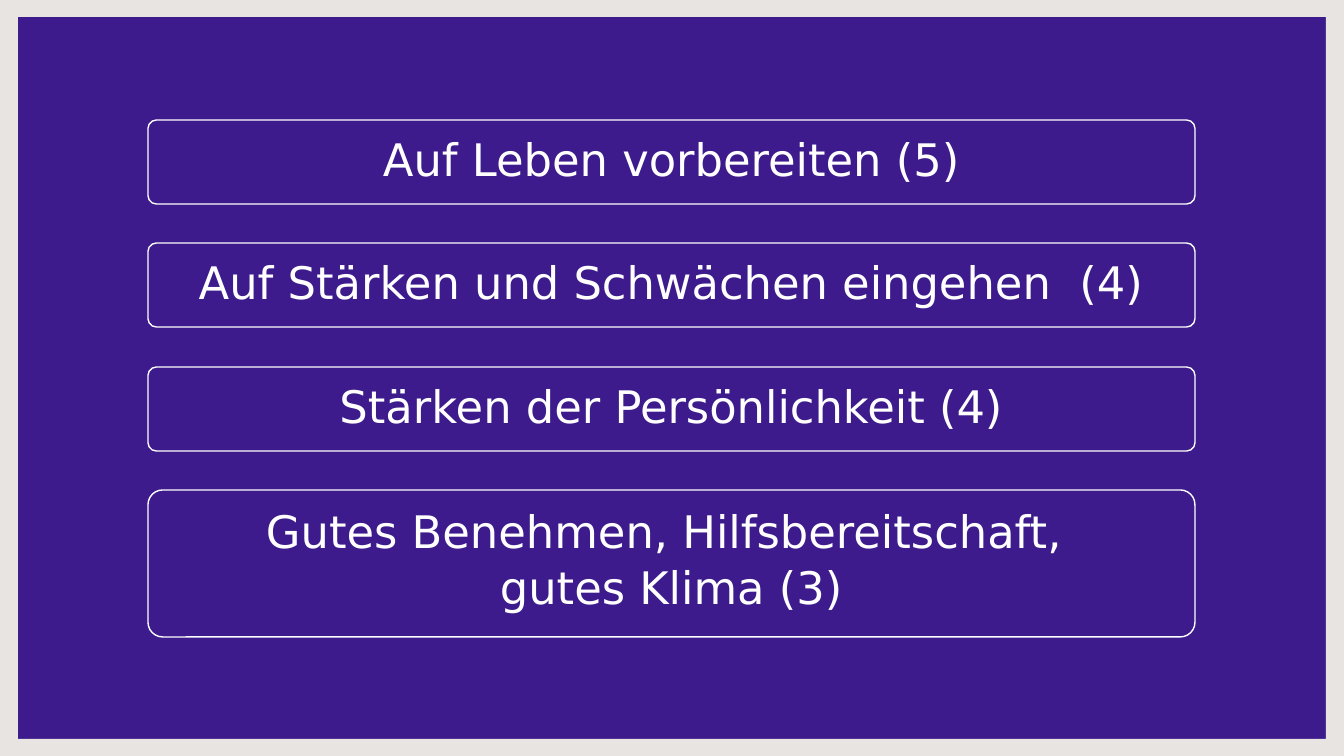
import dataclasses

import pptx
import pptx.dml.color
import pptx.enum.shapes
import pptx.enum.text
import pptx.util


@dataclasses.dataclass(frozen=True)
class Theme:
    """Colours and type of the deck."""
    background: str = "3D1B8C"
    border: str = "E8E4E2"
    text: str = "FFFFFF"
    font: str = "DejaVu Sans"
    size: int = 32
    line_spacing: float = 1.04
    outline: int = 1


class SlideBuilder:
    """Adds styled elements to the current slide, in pixels."""
    SCALE = 914400 / 100.8

    def __init__(self, page, theme):
        self.page = page
        self.theme = theme

    @classmethod
    def px(cls, length):
        """Turn pixels into EMU."""
        return pptx.util.Emu(round(length * cls.SCALE))

    @staticmethod
    def paint(fill, colour):
        """Give a fill one solid colour."""
        fill.solid()
        fill.fore_color.rgb = pptx.dml.color.RGBColor.from_string(colour)

    def background(self):
        """Colour the slide background."""
        self.paint(self.page.background.fill, self.theme.background)

    def border(self, width, height, margin_x, margin_y):
        """Draw a border around the slide with an open centre."""
        right, bottom = width - margin_x, height - margin_y
        outline = self.page.shapes.build_freeform(0, 0, scale=self.SCALE)
        outline.add_line_segments([(width, 0), (width, height), (0, height)])
        outline.move_to(margin_x, margin_y)
        outline.add_line_segments(
            [(margin_x, bottom), (right, bottom), (right, margin_y)])
        border = outline.convert_to_shape()
        border.shadow.inherit = False
        self.paint(border.fill, self.theme.border)
        border.line.fill.background()

    def answer(self, left, top, width, height, lines):
        """Draw an outlined rounded box with one paragraph per line."""
        box = self.page.shapes.add_shape(
            pptx.enum.shapes.MSO_SHAPE.ROUNDED_RECTANGLE,
            *map(self.px, (left, top, width, height)))
        box.adjustments[0] = 0.1
        box.shadow.inherit = False
        box.fill.background()
        self.paint(box.line.fill, self.theme.text)
        box.line.width = pptx.util.Pt(self.theme.outline)
        frame = box.text_frame
        frame.word_wrap = True
        frame.vertical_anchor = pptx.enum.text.MSO_ANCHOR.TOP
        frame.margin_top = self.px(7)
        frame.text = "\n".join(lines)
        for para in frame.paragraphs:
            para.alignment = pptx.enum.text.PP_ALIGN.CENTER
            para.line_spacing = self.theme.line_spacing
            para.font.name = self.theme.font
            para.font.size = pptx.util.Pt(self.theme.size)
            self.paint(para.font.fill, self.theme.text)


WIDTH, HEIGHT = 1344, 756
ANSWERS = [
    ["Auf Leben vorbereiten (5)"],
    ["Auf Stärken und Schwächen eingehen  (4)"],
    ["Stärken der Persönlichkeit (4)"],
    ["Gutes Benehmen, Hilfsbereitschaft, ", "gutes Klima (3)"],
]


def main():
    """Build and save the deck."""
    deck = pptx.Presentation()
    deck.slide_width = SlideBuilder.px(WIDTH)
    deck.slide_height = SlideBuilder.px(HEIGHT)
    page = deck.slides.add_slide(deck.slide_layouts.get_by_name("Blank"))
    builder = SlideBuilder(page, Theme())
    builder.background()
    builder.border(WIDTH, HEIGHT, 18, 17)
    for row, lines in enumerate(ANSWERS):
        top = 120 + row * 247 // 2
        height = 84 + 63 * (len(lines) - 1)
        builder.answer(148, top, 1047, height, lines)
    deck.save("out.pptx")


if __name__ == "__main__":
    main()
